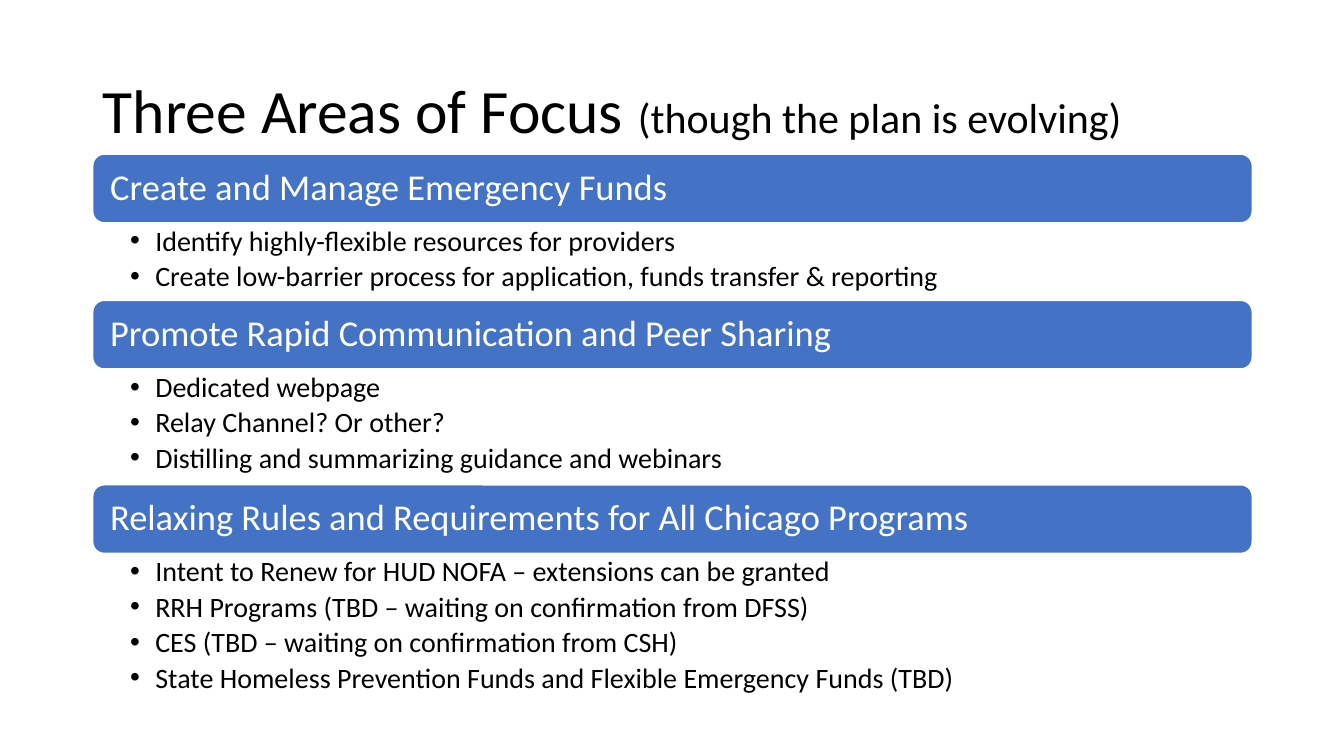
"""Build the slide on three areas of focus, with headed bullet lists."""
from lxml.etree import SubElement
from pptx import Presentation
from pptx.dml.color import RGBColor
from pptx.enum.shapes import MSO_SHAPE
from pptx.enum.text import MSO_ANCHOR, MSO_AUTO_SIZE, PP_ALIGN
from pptx.oxml.ns import qn
from pptx.util import Pt

EMU_PER_PX = 9144
LEFT, WIDTH = 92, 1150
FIRST_TOP, BAR_HEIGHT = 153, 68
BLACK, WHITE, BLUE = "000000", "FFFFFF", "4472C4"

AREAS = [
    ("Create and Manage Emergency Funds", 77, [
        "Identify highly-flexible resources for providers",
        "Create low-barrier process for application, funds transfer & reporting",
    ]),
    ("Promote Rapid Communication and Peer Sharing", 115, [
        "Dedicated webpage",
        "Relay Channel? Or other?",
        "Distilling and summarizing guidance and webinars",
    ]),
    ("Relaxing Rules and Requirements for All Chicago Programs", 150, [
        "Intent to Renew for HUD NOFA – extensions can be granted",
        "RRH Programs (TBD – waiting on confirmation from DFSS)",
        "CES (TBD – waiting on confirmation from CSH)",
        "State Homeless Prevention Funds and Flexible Emergency Funds (TBD)",
    ]),
]


def px(length):
    return length * EMU_PER_PX


def color(hex_string):
    return RGBColor.from_string(hex_string)


def place(shape, top, height):
    shape.left, shape.top = px(LEFT), px(top)
    shape.width, shape.height = px(WIDTH), px(height)


def format_frame(frame, anchor, left, top, right, bottom):
    frame.word_wrap = True
    frame.auto_size = MSO_AUTO_SIZE.NONE
    frame.vertical_anchor = anchor
    frame.margin_left, frame.margin_top = px(left), px(top)
    frame.margin_right, frame.margin_bottom = px(right), px(bottom)


def format_paragraph(paragraph, space_after=0):
    paragraph.alignment = PP_ALIGN.LEFT
    paragraph.line_spacing = 0.9
    paragraph.space_before = Pt(0)
    paragraph.space_after = Pt(space_after)


def add_run(paragraph, text, size, hex_string):
    run = paragraph.add_run()
    run.text = text
    run.font.name = "Calibri"
    run.font.size = Pt(size)
    run.font.bold = False
    run.font.color.rgb = color(hex_string)


def add_bullet(paragraph):
    properties = paragraph._p.get_or_add_pPr()
    properties.set("marL", str(px(25)))
    properties.set("indent", str(px(-25)))
    SubElement(properties, qn("a:buFont"), typeface="Arial")
    SubElement(properties, qn("a:buChar"), char="•")


def fill_title(title):
    place(title, 40, 145)
    format_frame(title.text_frame, MSO_ANCHOR.MIDDLE, 10, 5, 10, 5)
    paragraph = title.text_frame.paragraphs[0]
    format_paragraph(paragraph)
    add_run(paragraph, "Three Areas of Focus ", 44, BLACK)
    add_run(paragraph, "(though the plan is evolving)", 30, BLACK)


def add_heading_bar(slide, text, top):
    bar = slide.shapes.add_shape(
        MSO_SHAPE.ROUNDED_RECTANGLE, px(LEFT), px(top), px(WIDTH), px(BAR_HEIGHT))
    bar.shadow.inherit = False
    bar.fill.solid()
    bar.fill.fore_color.rgb = color(BLUE)
    bar.line.color.rgb = color(WHITE)
    bar.line.width = Pt(1)
    format_frame(bar.text_frame, MSO_ANCHOR.MIDDLE, 14, 11, 14, 11)
    paragraph = bar.text_frame.paragraphs[0]
    format_paragraph(paragraph)
    add_run(paragraph, text, 26, WHITE)


def fill_list(body, items, top, height):
    place(body, top, height)
    frame = body.text_frame
    format_frame(frame, MSO_ANCHOR.TOP, 37, 4, 20, 4)
    for index, item in enumerate(items):
        paragraph = frame.add_paragraph() if index else frame.paragraphs[0]
        format_paragraph(paragraph, 3.75)
        add_bullet(paragraph)
        add_run(paragraph, item, 20, BLACK)


def main():
    presentation = Presentation()
    presentation.slide_width, presentation.slide_height = px(1333), px(750)
    comparison_layout = presentation.slide_layouts[4]
    slide = presentation.slides.add_slide(comparison_layout)
    title, *bodies = slide.placeholders
    fill_title(title)

    top = FIRST_TOP
    for body, (heading, list_height, items) in zip(bodies, AREAS):
        add_heading_bar(slide, heading, top)
        fill_list(body, items, top + BAR_HEIGHT, list_height)
        top += BAR_HEIGHT + list_height
    for unused in bodies[len(AREAS):]:
        unused.element.getparent().remove(unused.element)

    presentation.save("out.pptx")


if __name__ == "__main__":
    main()
